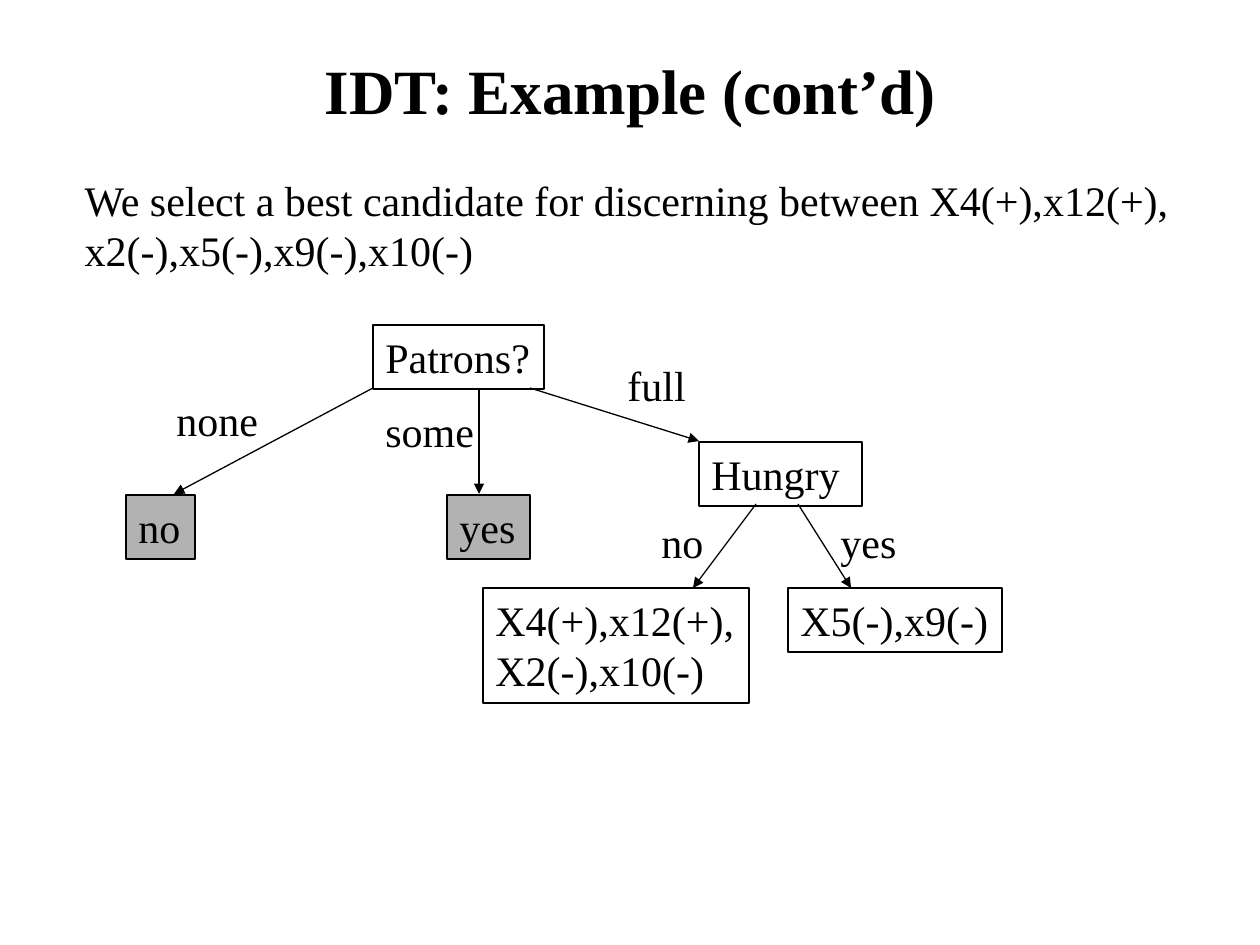
from dataclasses import dataclass

from lxml import etree
from pptx import Presentation
from pptx.dml.color import RGBColor
from pptx.enum.shapes import MSO_CONNECTOR, MSO_SHAPE
from pptx.enum.text import MSO_ANCHOR, MSO_AUTO_SIZE, PP_ALIGN
from pptx.oxml.ns import qn
from pptx.util import Emu, Pt

RECTANGLE = MSO_SHAPE.RECTANGLE
STRAIGHT = MSO_CONNECTOR.STRAIGHT
TOP, MIDDLE = MSO_ANCHOR.TOP, MSO_ANCHOR.MIDDLE
LEFT, CENTER = PP_ALIGN.LEFT, PP_ALIGN.CENTER
FIXED = MSO_AUTO_SIZE.NONE
PX_PER_INCH = 126


@dataclass(frozen=True)
class Theme:
    font: str = "Times New Roman"
    ink: RGBColor = RGBColor(0, 0, 0)
    leaf: RGBColor = RGBColor(0xB2, 0xB2, 0xB2)
    title_size: Pt = Pt(36)
    text_size: Pt = Pt(24)
    line_width: Pt = Pt(0.75)


THEME = Theme()


def px(length):
    return Emu(round(length * 914400 / PX_PER_INCH))


def apply(target, values):
    for name, value in values.items():
        setattr(target, name, value)


def place(holder, box):
    apply(holder, dict(zip(("left", "top", "width", "height"), map(px, box))))


def write(holder, lines, size=THEME.text_size, bold=False, align=LEFT, anchor=TOP):
    frame = holder.text_frame
    frame.text = "\n".join(lines)
    apply(frame, {"word_wrap": True, "auto_size": FIXED,
                  "vertical_anchor": anchor, "margin_right": 0})
    for paragraph in frame.paragraphs:
        apply(paragraph, {"alignment": align, "space_before": Pt(0)})
        font = paragraph.runs[0].font
        apply(font, {"name": THEME.font, "size": size, "bold": bold})
        font.color.rgb = THEME.ink


def add_label(shapes, origin, box, text):
    label = shapes.add_textbox(0, 0, 0, 0)
    place(label, (origin[0] + box[0], origin[1] + box[1], *box[2:]))
    write(label, [text])


def add_node(shapes, origin, box, lines, fill=None):
    node = shapes.add_shape(RECTANGLE, 0, 0, 0, 0)
    place(node, (origin[0] + box[0], origin[1] + box[1], *box[2:]))
    node.shadow.inherit = False
    if fill is None:
        node.fill.background()
    else:
        node.fill.solid()
        node.fill.fore_color.rgb = fill
    node.line.color.rgb = THEME.ink
    node.line.width = THEME.line_width
    write(node, lines)


def add_branch(shapes, origin, start, end):
    ends = [px(origin[axis] + point[axis]) for point in (start, end) for axis in (0, 1)]
    branch = shapes.add_connector(STRAIGHT, *ends)
    branch.line.color.rgb = THEME.ink
    branch.line.width = THEME.line_width
    etree.SubElement(branch.line._get_or_add_ln(), qn("a:tailEnd"), type="triangle")
    etree.SubElement(branch._element.spPr, qn("a:effectLst"))


def build_title(slide, box):
    title = slide.shapes.title
    place(title, box)
    write(title, ["IDT: Example (cont’d)"], THEME.title_size, True, CENTER, MIDDLE)
    title.text_frame.margin_right = title.text_frame.margin_left


def build_statement(slide, box):
    statement = slide.placeholders[1]
    place(statement, box)
    write(statement, ["We select a best candidate for discerning between X4(+),x12(+),",
                      "x2(-),x5(-),x9(-),x10(-)"])
    for paragraph in statement.text_frame.paragraphs:
        properties = paragraph._p.get_or_add_pPr()
        properties.set("marL", "0")
        properties.set("indent", "0")
        etree.SubElement(properties, qn("a:buNone"))


def build_patrons_tree(shapes, origin):
    add_node(shapes, origin, (247, 0, 171, 64), ["Patrons?"])
    for box, answer in (((0, 170, 69, 64), "no"), ((321, 170, 83, 64), "yes")):
        add_node(shapes, origin, box, [answer], THEME.leaf)
    for box, value in (((38, 63, 107, 63), "none"), ((247, 74, 113, 63), "some"),
                       ((489, 28, 83, 63), "full")):
        add_label(shapes, origin, box, value)
    for start, end in (((247, 63), (48, 169)), ((353, 63), (353, 169)),
                       ((404, 63), (573, 116))):
        add_branch(shapes, origin, start, end)


def build_hungry_tree(shapes, origin):
    add_node(shapes, origin, (216, 0, 163, 64), ["Hungry"])
    for start, end in (((273, 62), (210, 146)), ((315, 62), (368, 146))):
        add_branch(shapes, origin, start, end)
    for box, value in (((166, 68, 67, 63), "no"), ((345, 68, 82, 63), "yes")):
        add_label(shapes, origin, box, value)
    add_node(shapes, origin, (305, 146, 214, 64), ["X5(-),x9(-)"])
    add_node(shapes, origin, (0, 146, 266, 115), ["X4(+),x12(+),", "X2(-),x10(-)"])


def main():
    deck = Presentation()
    apply(deck, {"slide_width": px(1260), "slide_height": px(945)})
    slide = deck.slides.add_slide(deck.slide_layouts[1])
    build_title(slide, (95, 10, 1071, 158))
    build_statement(slide, (72, 168, 1147, 164))
    build_patrons_tree(slide.shapes, (126, 325))
    build_hungry_tree(slide.shapes.add_group_shape().shapes, (483, 442))
    deck.save("out.pptx")


if __name__ == "__main__":
    main()
